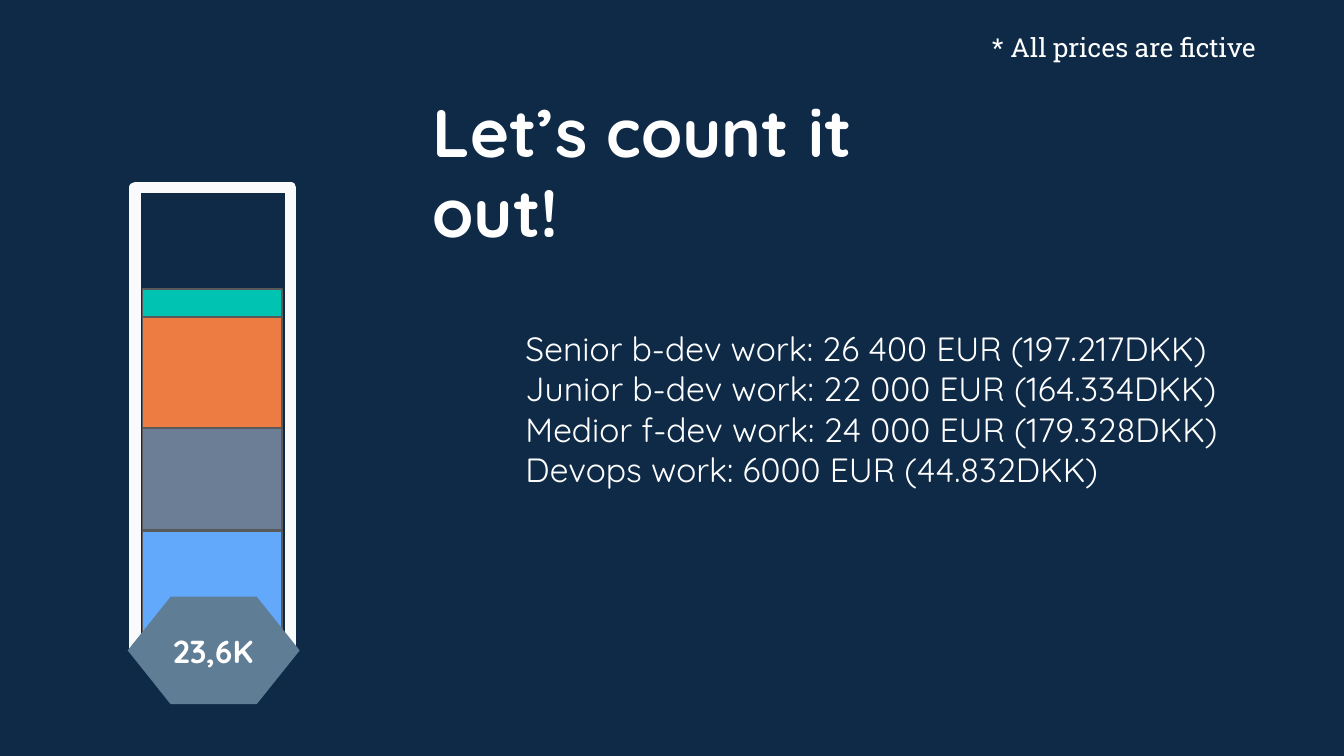
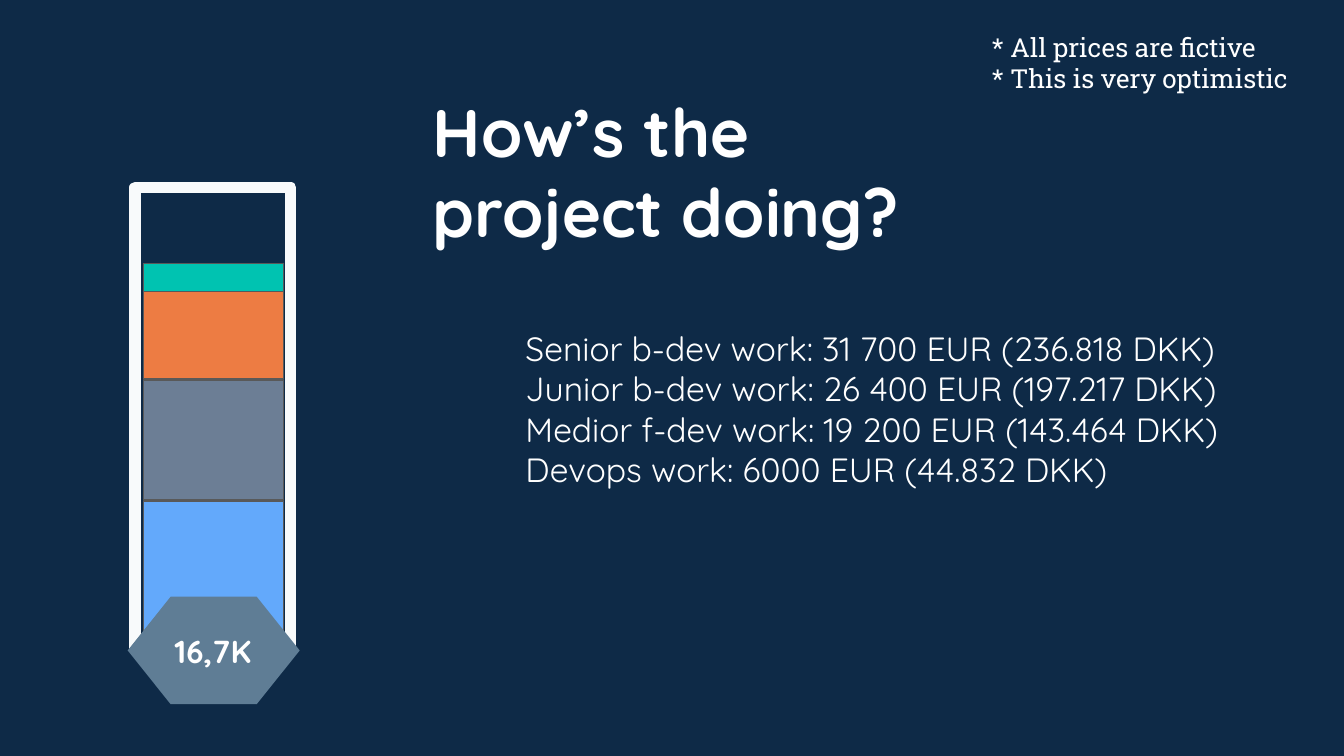
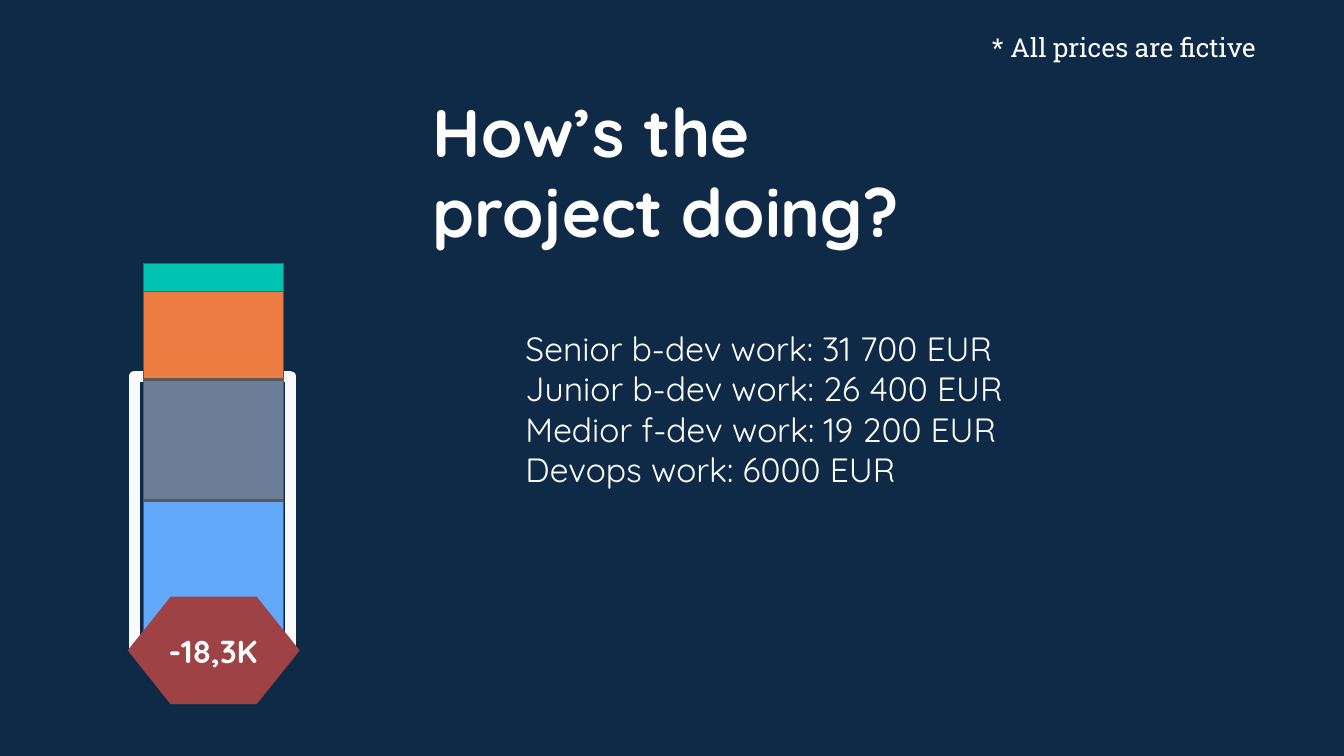
from dataclasses import dataclass

import pptx
import pptx.dml.color
import pptx.enum.shapes
import pptx.enum.text
import pptx.oxml.ns
import pptx.util
from lxml import etree

PX = 9144
SLIDE_WIDTH = 1000
NAVY, WHITE, FRAME, EDGE = "0E2A47", "FFFFFF", "F8FAFB", "595959"
STEEL, RED = "5F7D95", "9F4246"
BAR_COLORS = ("00C3B1", "ED7C43", "6C7E95", "63A9FB")
BAR_GAPS = (0, 1, 1, 0)
BAR_WIDTH, STACK_BOTTOM = 104, 483
HEXAGON = ((95, 484), (127, 444), (191, 444), (223, 484), (191, 524), (127, 524))
ANCHOR = pptx.enum.text.MSO_ANCHOR
ALIGN = pptx.enum.text.PP_ALIGN


@dataclass(frozen=True)
class Box:
    x: int
    y: int
    w: int
    h: int

    def emu(self) -> tuple[int, int, int, int]:
        return self.x * PX, self.y * PX, self.w * PX, self.h * PX


@dataclass(frozen=True)
class TextStyle:
    font: str
    size: int
    bold: bool = False
    align: ALIGN = ALIGN.LEFT
    anchor: ANCHOR = ANCHOR.TOP


@dataclass(frozen=True)
class BudgetSlide:
    title: str
    costs: tuple[str, ...]
    costs_box: Box
    notes: tuple[str, ...]
    balance: str
    badge_color: str
    bar_x: int
    bar_heights: tuple[int, ...]
    frame: Box
    frame_in_front: bool = True


TITLE = TextStyle("Quicksand", 36, bold=True)
COSTS = TextStyle("Quicksand", 18)
BALANCE = TextStyle("Quicksand", 17, True, ALIGN.CENTER, ANCHOR.MIDDLE)
NOTE = TextStyle("Roboto Slab", 14)
TITLE_BOX = Box(312, 57, 376, 141)
BALANCE_BOX = Box(114, 446, 89, 76)
NOTE_BOX = Box(728, 13, 258, 51)
TALL_FRAME = Box(-13, 253, 343, 116)
SHORT_FRAME = Box(57, 323, 202, 116)
FICTIVE = "* All prices are fictive"
OVERRUN_HEIGHTS = (21, 65, 89, 110)

SLIDES = (
    BudgetSlide(
        "Let’s count it out!",
        (
            "Senior b-dev work: 26 400 EUR (197.217DKK)",
            "Junior b-dev work: 22 000 EUR (164.334DKK)",
            "Medior f-dev work: 24 000 EUR (179.328DKK)",
            "Devops work: 6000 EUR (44.832DKK)",
        ),
        Box(381, 234, 558, 241), (FICTIVE,), "23,6K", STEEL,
        106, (21, 82, 75, 88), TALL_FRAME,
    ),
    BudgetSlide(
        "How’s the project doing?",
        (
            "Senior b-dev work: 31 700 EUR (236.818 DKK)",
            "Junior b-dev work: 26 400 EUR (197.217 DKK)",
            "Medior f-dev work: 19 200 EUR (143.464 DKK)",
            "Devops work: 6000 EUR (44.832 DKK)",
        ),
        Box(381, 234, 563, 206), (FICTIVE, "* This is very optimistic"), "16,7K", STEEL,
        107, OVERRUN_HEIGHTS, TALL_FRAME,
    ),
    BudgetSlide(
        "How’s the project doing?",
        (
            "Senior b-dev work: 31 700 EUR",
            "Junior b-dev work: 26 400 EUR",
            "Medior f-dev work: 19 200 EUR",
            "Devops work: 6000 EUR",
        ),
        Box(381, 234, 407, 206), (FICTIVE,), "-18,3K", RED,
        107, OVERRUN_HEIGHTS, SHORT_FRAME, frame_in_front=False,
    ),
)


def rgb(value: str) -> pptx.dml.color.RGBColor:
    return pptx.dml.color.RGBColor.from_string(value)


def paint(fill, color: str) -> None:
    fill.solid()
    fill.fore_color.rgb = rgb(color)


def write(sp, lines: tuple[str, ...], style: TextStyle) -> None:
    tf = sp.text_frame
    tf.word_wrap = True
    tf.auto_size = pptx.enum.text.MSO_AUTO_SIZE.NONE
    tf.vertical_anchor = style.anchor
    tf.margin_left = tf.margin_right = tf.margin_top = tf.margin_bottom = 10 * PX
    for i, line in enumerate(lines):
        p = tf.add_paragraph() if i else tf.paragraphs[0]
        p.alignment = style.align
        p.space_before = pptx.util.Pt(0)
        r = p.add_run()
        r.text = line
        r.font.name = style.font
        r.font.size = pptx.util.Pt(style.size)
        r.font.bold = style.bold
        r.font.color.rgb = rgb(WHITE)


def place(sp, box: Box) -> None:
    sp.left, sp.top, sp.width, sp.height = box.emu()


def remove_bullets(sp) -> None:
    for p in sp.text_frame.paragraphs:
        pPr = p._p.get_or_add_pPr()
        pPr.set("marL", "0")
        pPr.set("indent", "0")
        etree.SubElement(pPr, pptx.oxml.ns.qn("a:buNone"))


def add_rect(s, box: Box, line: str, weight: float):
    sp = s.shapes.add_shape(pptx.enum.shapes.MSO_SHAPE.RECTANGLE, *box.emu())
    sp.shadow.inherit = False
    sp.line.color.rgb = rgb(line)
    sp.line.width = pptx.util.Pt(weight)
    return sp


def add_frame(s, box: Box) -> None:
    sp = add_rect(s, box, FRAME, 6)
    sp.rotation = 270
    sp.fill.background()


def add_bars(s, x: int, heights: tuple[int, ...]) -> None:
    y = STACK_BOTTOM - sum(heights) - sum(BAR_GAPS)
    for height, gap, color in zip(heights, BAR_GAPS, BAR_COLORS):
        paint(add_rect(s, Box(x, y, BAR_WIDTH, height), EDGE, 0.75).fill, color)
        y += height + gap


def add_badge(s, balance: str, color: str) -> None:
    builder = s.shapes.build_freeform(*HEXAGON[0], scale=PX)
    builder.add_line_segments(HEXAGON[1:], close=True)
    sp = builder.convert_to_shape()
    sp.shadow.inherit = False
    paint(sp.fill, color)
    sp.line.fill.background()
    write(s.shapes.add_textbox(*BALANCE_BOX.emu()), (balance,), BALANCE)


def add_budget_slide(prs, budget: BudgetSlide) -> None:
    s = prs.slides.add_slide(prs.slide_layouts[1])
    title, body = s.shapes.title, s.placeholders[1]
    place(title, TITLE_BOX)
    write(title, (budget.title,), TITLE)
    place(body, budget.costs_box)
    write(body, budget.costs, COSTS)
    remove_bullets(body)
    write(s.shapes.add_textbox(*NOTE_BOX.emu()), budget.notes, NOTE)
    if not budget.frame_in_front:
        add_frame(s, budget.frame)
    add_bars(s, budget.bar_x, budget.bar_heights)
    if budget.frame_in_front:
        add_frame(s, budget.frame)
    add_badge(s, budget.balance, budget.badge_color)


def main() -> None:
    prs = pptx.Presentation()
    prs.slide_width = SLIDE_WIDTH * PX
    prs.slide_height = SLIDE_WIDTH * PX * 9 // 16
    paint(prs.slide_master.background.fill, NAVY)
    for budget in SLIDES:
        add_budget_slide(prs, budget)
    prs.save("out.pptx")


if __name__ == "__main__":
    main()
